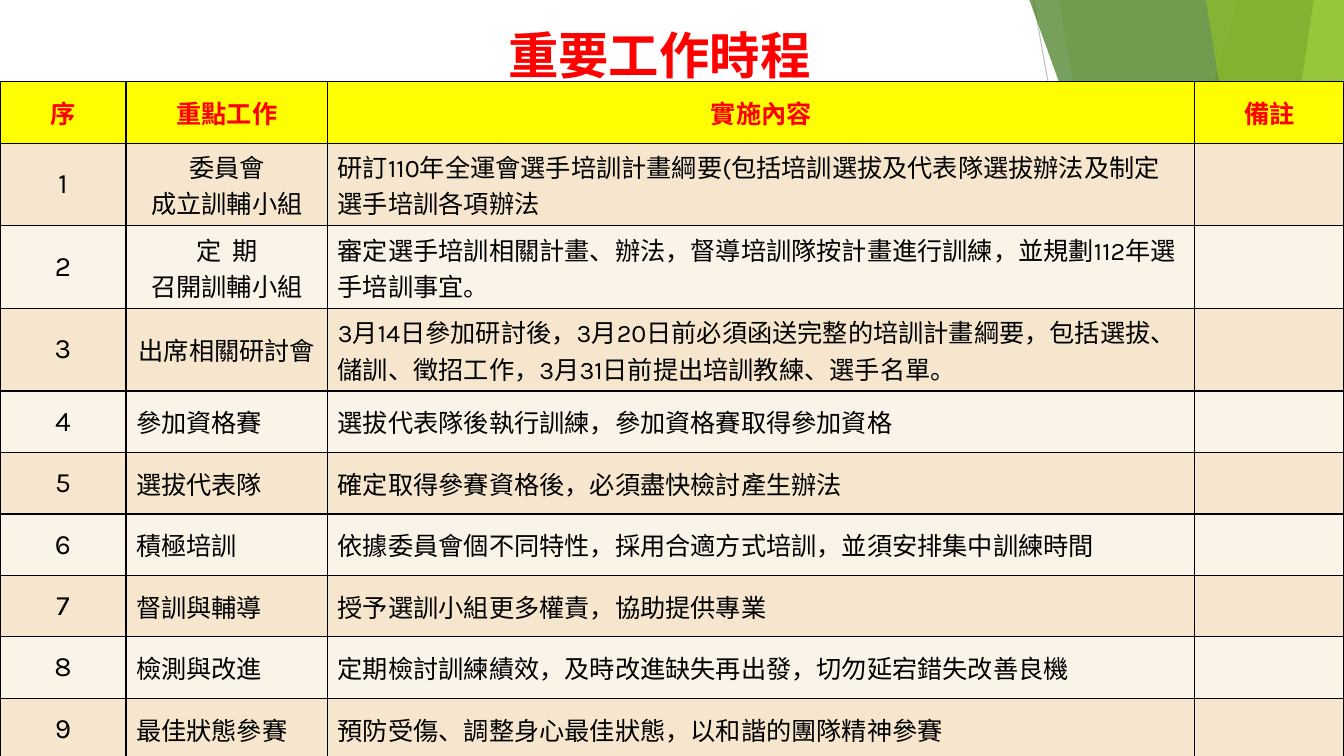
from dataclasses import dataclass

from lxml.etree import SubElement
from pptx import Presentation
from pptx.dml.color import RGBColor
from pptx.enum.shapes import MSO_CONNECTOR, MSO_SHAPE
from pptx.enum.text import MSO_ANCHOR, PP_ALIGN
from pptx.oxml.ns import qn
from pptx.util import Inches, Pt


@dataclass(frozen=True)
class Theme:
    accent: str = "FF0000"
    ink: str = "000000"
    header: str = "FFFF00"
    bands: tuple = ("F5E6CD", "FAF3E8")
    lime: str = "90C226"
    green: str = "54A021"
    forest: str = "3F7819"
    pale: str = "C0E474"
    title_font: str = "Arial"
    table_font: str = "Karla"
    title_size: int = 36
    number_size: int = 20
    text_size: int = 18


T = Theme()
WIDTH, HEIGHT = 13.33, 7.5
TITLE = "重要工作時程"
HEADERS = ["序", "重點工作", "實施內容", "備註"]
TASKS = [
    ("委員會\n成立訓輔小組", "研訂110年全運會選手培訓計畫綱要(包括培訓選拔及代表隊選拔辦法及制定選手培訓各項辦法"),
    ("定  期\n召開訓輔小組", "審定選手培訓相關計畫、辦法，督導培訓隊按計畫進行訓練，並規劃112年選手培訓事宜。"),
    ("出席相關研討會", "3月14日參加研討後，3月20日前必須函送完整的培訓計畫綱要，包括選拔、儲訓、徵招工作，3月31日前提出培訓教練、選手名單。"),
    ("參加資格賽", "選拔代表隊後執行訓練，參加資格賽取得參加資格"),
    ("選拔代表隊", "確定取得參賽資格後，必須盡快檢討產生辦法"),
    ("積極培訓", "依據委員會個不同特性，採用合適方式培訓，並須安排集中訓練時間"),
    ("督訓與輔導", "授予選訓小組更多權責，協助提供專業"),
    ("檢測與改進", "定期檢討訓練績效，及時改進缺失再出發，切勿延宕錯失改善良機"),
    ("最佳狀態參賽", "預防受傷、調整身心最佳狀態，以和諧的團隊精神參賽"),
]
COLUMNS = [1.25, 2, 8.6, 1.48]
TALL_TASKS = 3
TALL, LOW = 0.82, 0.61

RAYS = [((10.25, 0), (11.58, 7.5), "BFBFBF"), ((13.33, 4.03), (8.12, 7.5), "D9D9D9")]
# Each band: top-left x, bottom-left x; each triangle: left, width, height, apex.
FACETS = [
    ("band", (12.28, 10.04), T.lime, 30),
    ("band", (10.5, 11.83), T.lime, 20),
    ("triangle", (9.77, 3.56, 4.17, 1), T.green, 72),
    ("band", (10.21, 12.91), T.forest, 70),
    ("band", (13.03, 11.92), T.pale, 70),
    ("band", (11.96, 13.18), T.lime, 65),
    ("triangle", (11.34, 1.99, 3.57, 1), T.lime, 80),
    ("triangle", (0, 0.49, 3.11, 0), T.lime, 85),
]


def rgb(value):
    return RGBColor.from_string(value)


def add_ray(slide, start, end, color):
    line = slide.shapes.add_connector(
        MSO_CONNECTOR.STRAIGHT, *(Inches(v) for v in start + end))
    line.line.color.rgb = rgb(color)
    line.line.width = Pt(0.75)
    SubElement(line._element.spPr, qn("a:effectLst"))


def add_facet(slide, kind, geometry, color, opacity):
    if kind == "band":
        top_x, bottom_x = geometry
        corners = [(WIDTH, 0), (WIDTH, HEIGHT), (bottom_x, HEIGHT)]
        fb = slide.shapes.build_freeform(Inches(top_x), 0)
        fb.add_line_segments([(Inches(x), Inches(y)) for x, y in corners])
        sp = fb.convert_to_shape()
    else:
        left, width, height, apex = geometry
        sp = slide.shapes.add_shape(
            MSO_SHAPE.ISOSCELES_TRIANGLE, Inches(left), Inches(HEIGHT - height),
            Inches(width), Inches(height))
        sp.adjustments[0] = apex
    sp.shadow.inherit = False
    sp.line.fill.background()
    sp.fill.solid()
    sp.fill.fore_color.rgb = rgb(color)
    clr = sp._element.spPr.find(qn("a:solidFill")).find(qn("a:srgbClr"))
    SubElement(clr, qn("a:alpha"), val=str(opacity * 1000))


def write(tf, text, font, size, color, align, bold=False):
    tf.text = text
    for p in tf.paragraphs:
        p.alignment = align
        p.font.name = font
        p.font.size = Pt(size)
        p.font.bold = bold
        p.font.color.rgb = rgb(color)


def style_cell(cell, fill):
    tc_pr = cell._tc.get_or_add_tcPr()
    for side in ("lnL", "lnR", "lnT", "lnB"):
        ln = SubElement(tc_pr, qn(f"a:{side}"), w=str(Pt(1)))
        SubElement(SubElement(ln, qn("a:solidFill")), qn("a:srgbClr"), val=T.ink)
    cell.fill.solid()
    cell.fill.fore_color.rgb = rgb(fill)
    cell.vertical_anchor = MSO_ANCHOR.MIDDLE


def add_schedule(slide):
    heights = [LOW] + [TALL if i < TALL_TASKS else LOW for i in range(len(TASKS))]
    table = slide.shapes.add_table(
        len(heights), len(COLUMNS), 0, Inches(0.81),
        Inches(WIDTH), Inches(sum(heights))).table
    for col, width in zip(table.columns, COLUMNS):
        col.width = Inches(width)
    for row, height in zip(table.rows, heights):
        row.height = Inches(height)

    for c, header in enumerate(HEADERS):
        cell = table.cell(0, c)
        style_cell(cell, T.header)
        write(cell.text_frame, header, T.table_font, T.text_size, T.accent,
              PP_ALIGN.CENTER, True)

    for i, (task, detail) in enumerate(TASKS):
        task_align = PP_ALIGN.CENTER if i < TALL_TASKS else PP_ALIGN.LEFT
        entries = [
            (str(i + 1), T.number_size, PP_ALIGN.CENTER),
            (task, T.text_size, task_align),
            (detail, T.text_size, PP_ALIGN.LEFT),
            ("", T.text_size, PP_ALIGN.LEFT),
        ]
        for c, (text, size, align) in enumerate(entries):
            cell = table.cell(i + 1, c)
            style_cell(cell, T.bands[i % 2])
            write(cell.text_frame, text, T.table_font, size, T.ink, align)


def main():
    prs = Presentation()
    prs.slide_width, prs.slide_height = Inches(WIDTH), Inches(HEIGHT)
    slide = prs.slides.add_slide(prs.slide_layouts[6])
    for ray in RAYS:
        add_ray(slide, *ray)
    for facet in FACETS:
        add_facet(slide, *facet)
    title = slide.shapes.add_textbox(
        Inches(0.81), Inches(0.15), Inches(11.46), Inches(0.78))
    tf = title.text_frame
    tf.word_wrap = True
    tf.vertical_anchor = MSO_ANCHOR.MIDDLE
    write(tf, TITLE, T.title_font, T.title_size, T.accent, PP_ALIGN.CENTER, True)
    add_schedule(slide)
    prs.save("out.pptx")


if __name__ == "__main__":
    main()
